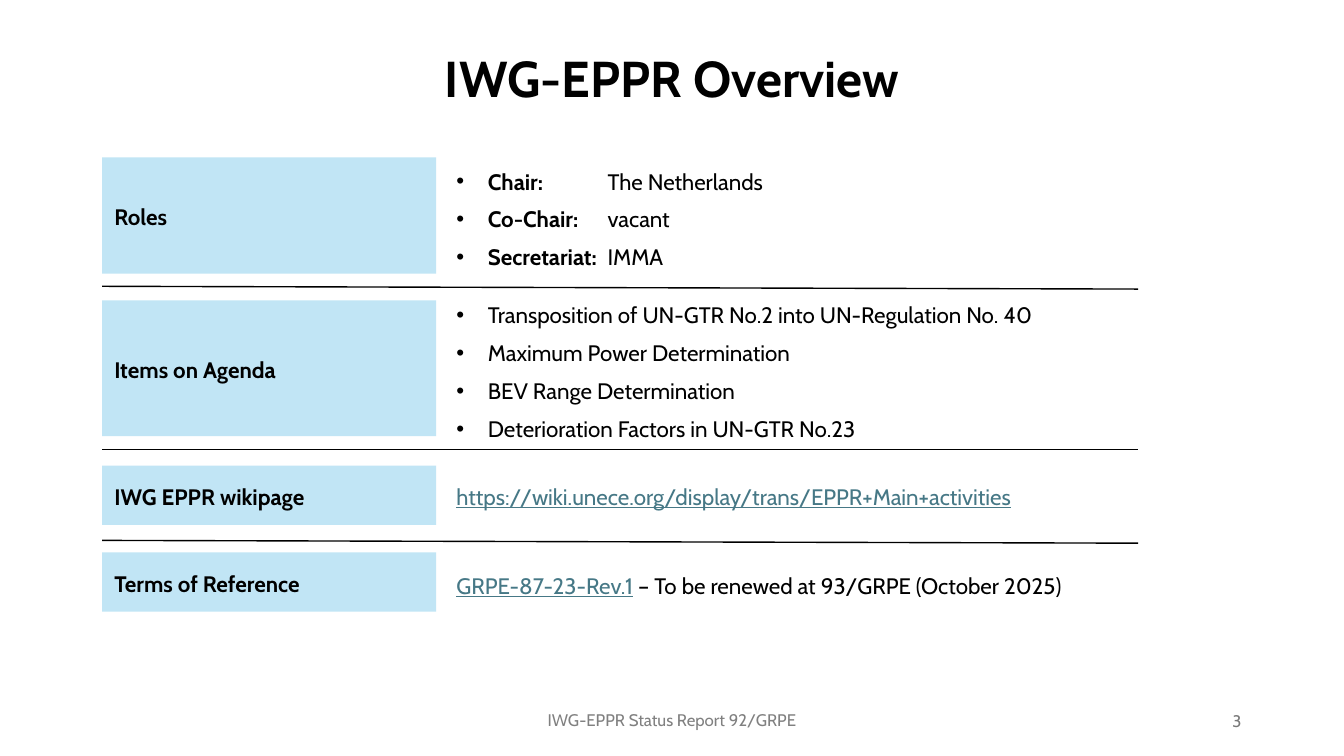
from dataclasses import dataclass

from lxml import etree
from pptx import Presentation
from pptx.dml.color import RGBColor
from pptx.enum import shapes, text
from pptx.oxml import ns
from pptx.util import Pt


@dataclass(frozen=True)
class Theme:
    font: str = "Cabin"
    ink: str = "000000"
    label_fill: str = "C1E5F5"
    link: str = "467886"
    footer: str = "808080"
    number: str = "797979"
    title_size: int = 36
    body_size: int = 16
    footer_size: int = 12


THEME = Theme()
LEFT, LABEL_WIDTH, CONTENT_LEFT, RULE_RIGHT = 73, 238.5, 326, 813
LABEL_INSETS = (8.64, 5.76)
BULLET_INDENT = 22.5

# A span is (wording, style); style is "", "bold" or "link"
ROLES = [
    [("Chair: \t\t", "bold"), ("The Netherlands", "")],
    [("Co-Chair:", "bold"), ("\tvacant", "")],
    [("Secretariat: \t", "bold"), ("IMMA", "")],
]
AGENDA = [[(item, "")] for item in (
    "Transposition of UN-GTR No.2 into UN-Regulation No. 40",
    "Maximum Power Determination",
    "BEV Range Determination",
    "Deterioration Factors in UN-GTR No.23",
)]
WIKIPAGE = [[("https://wiki.unece.org/display/trans/EPPR+Main+activities", "link")]]
REFERENCE = [[("GRPE-87-23-Rev.1", "link"),
              (" – To be renewed at 93/GRPE (October 2025)", "")]]

# Label, its top and height, content, its top, height and width, bulleted
ROWS = [
    ("Roles", 112.5, 83, ROLES, 111, 89, 488, True),
    ("Items on Agenda", 214.5, 97, AGENDA, 214, 101, 488, True),
    ("IWG EPPR wikipage", 332.5, 42.5, WIKIPAGE, 332.5, 42.5, 506, False),
    ("Terms of Reference", 394.5, 42.5, REFERENCE, 396, 42.5, 506, False),
]
RULES = [(204.5, 206.5), (321, 321), (386, 388)]


def style_font(font, size, color, bold=False):
    font.name = THEME.font
    font.size = Pt(size)
    font.bold = bold
    font.color.rgb = RGBColor.from_string(color)


def set_frame(frame, insets, anchor=text.MSO_ANCHOR.MIDDLE):
    frame.word_wrap = True
    frame.vertical_anchor = anchor
    frame.margin_left = frame.margin_right = Pt(insets[0])
    frame.margin_top = frame.margin_bottom = Pt(insets[1])


def add_bullet(para):
    props = para._p.get_or_add_pPr()
    props.set("marL", str(Pt(BULLET_INDENT)))
    props.set("indent", str(-Pt(BULLET_INDENT)))
    etree.SubElement(props, ns.qn("a:buFont"), typeface="Arial")
    etree.SubElement(props, ns.qn("a:buChar"), char="•")


def add_line_of_text(page, wording, bounds, size, color, align,
                     bold=False, anchor=text.MSO_ANCHOR.MIDDLE):
    box = page.shapes.add_textbox(*map(Pt, bounds))
    set_frame(box.text_frame, (7.2, 3.6), anchor)
    box.text_frame.text = wording
    para = box.text_frame.paragraphs[0]
    para.alignment = align
    style_font(para.runs[0].font, size, color, bold)


def add_label(page, wording, top, height):
    box = page.shapes.add_shape(shapes.MSO_SHAPE.RECTANGLE, Pt(LEFT), Pt(top),
                                Pt(LABEL_WIDTH), Pt(height))
    box.shadow.inherit = False
    box.fill.solid()
    box.fill.fore_color.rgb = RGBColor.from_string(THEME.label_fill)
    box.line.fill.background()
    set_frame(box.text_frame, LABEL_INSETS)
    box.text_frame.text = wording
    para = box.text_frame.paragraphs[0]
    para.alignment = text.PP_ALIGN.LEFT
    para.line_spacing = 1.1
    style_font(para.runs[0].font, THEME.body_size, THEME.ink, bold=True)


def add_content(page, lines, top, height, width, bulleted):
    box = page.shapes.add_textbox(Pt(CONTENT_LEFT), Pt(top), Pt(width), Pt(height))
    frame = box.text_frame
    set_frame(frame, (0, 0))
    for index, spans in enumerate(lines):
        para = frame.add_paragraph() if index else frame.paragraphs[0]
        para.line_spacing = 1.1
        para.space_before = Pt(6 if index else 0)
        if bulleted:
            add_bullet(para)
        for wording, style in spans:
            span = para.add_run()
            span.text = wording
            color = THEME.link if style == "link" else THEME.ink
            style_font(span.font, THEME.body_size, color, style == "bold")
            span.font.underline = style == "link"


def add_rule(page, start, end):
    rule = page.shapes.add_connector(shapes.MSO_CONNECTOR.STRAIGHT, Pt(LEFT),
                                     Pt(start), Pt(RULE_RIGHT), Pt(end))
    rule.line.width = Pt(1)
    rule.line.color.rgb = RGBColor.from_string(THEME.ink)
    etree.SubElement(rule._element.spPr, ns.qn("a:effectLst"))


def main():
    deck = Presentation()
    deck.slide_width, deck.slide_height = Pt(960), Pt(540)
    page = deck.slides.add_slide(deck.slide_layouts[6])

    # Title
    add_line_of_text(page, "IWG-EPPR Overview", (0, 0, 960, 111),
                     THEME.title_size, THEME.ink, text.PP_ALIGN.CENTER, bold=True)

    # Overview rows and the rules between them
    for label, label_top, label_height, *content in ROWS:
        add_label(page, label, label_top, label_height)
        add_content(page, *content)
    for start, end in RULES:
        add_rule(page, start, end)

    # Footer and page number
    add_line_of_text(page, "IWG-EPPR Status Report 92/GRPE", (0, 503.5, 960, 36.5),
                     THEME.footer_size, THEME.footer, text.PP_ALIGN.CENTER,
                     anchor=text.MSO_ANCHOR.TOP)
    add_line_of_text(page, "3", (678, 500.5, 216, 29), THEME.footer_size,
                     THEME.number, text.PP_ALIGN.RIGHT)

    deck.save("out.pptx")


if __name__ == "__main__":
    main()
